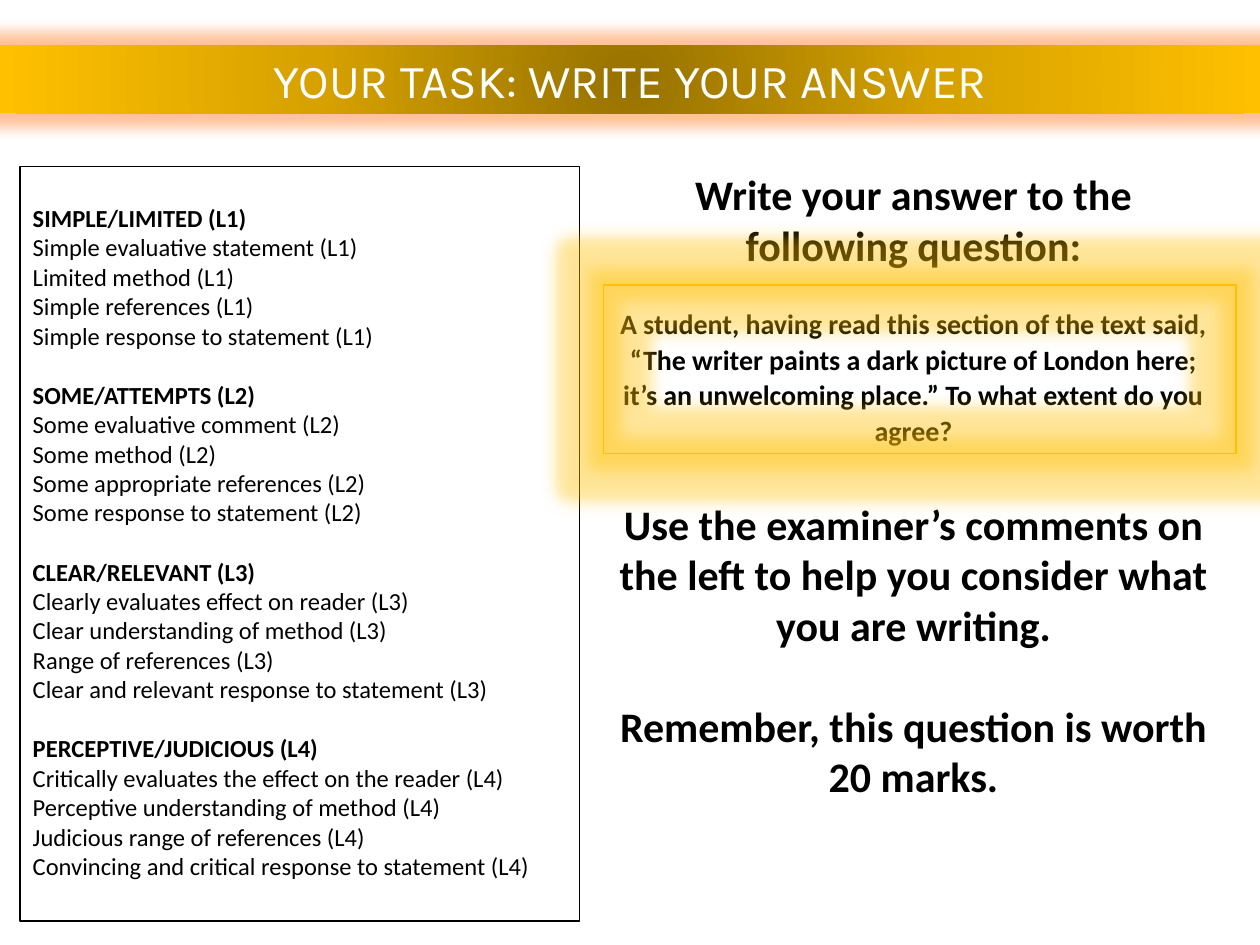
from dataclasses import dataclass

from lxml import etree
from pptx import Presentation
from pptx.dml.color import RGBColor
from pptx.enum.shapes import MSO_SHAPE as Preset
from pptx.enum.text import MSO_ANCHOR as Anchor, MSO_AUTO_SIZE as AutoSize, PP_ALIGN as Align
from pptx.oxml import parse_xml
from pptx.oxml.ns import nsdecls, qn
from pptx.util import Inches, Pt


@dataclass(frozen=True)
class Theme:
    text: str = "000000"
    title: str = "FFFFFF"
    gold: str = "FFC000"
    banner_stops: tuple = ((0, "977200"), (50, "D7A200"), (100, "FFC000"))
    banner_glow: str = "FF6600"
    body_font: str = "Calibri"
    title_font: str = "Karla"
    title_size: float = 27
    prompt_size: float = 24
    question_size: float = 16
    criteria_size: float = 14


THEME = Theme()

CRITERIA = {
    "SIMPLE/LIMITED (L1)": (
        "Simple evaluative statement (L1)",
        "Limited method (L1)",
        "Simple references (L1)",
        "Simple response to statement (L1)",
    ),
    "SOME/ATTEMPTS (L2)": (
        "Some evaluative comment (L2)",
        "Some method (L2)",
        "Some appropriate references (L2)",
        "Some response to statement (L2)",
    ),
    "CLEAR/RELEVANT (L3)": (
        "Clearly evaluates effect on reader (L3)",
        "Clear understanding of method (L3)",
        "Range of references (L3)",
        "Clear and relevant response to statement (L3)",
    ),
    "PERCEPTIVE/JUDICIOUS (L4)": (
        "Critically evaluates the effect on the reader (L4)",
        "Perceptive understanding of method (L4)",
        "Judicious range of references (L4)",
        "Convincing and critical response to statement (L4)",
    ),
}

# Text, size, space before, line spacing
PROMPTS = (
    ("Write your answer to the following question:", THEME.prompt_size, 0, 1),
    ("A student, having read this section of the text said, “The writer paints a dark "
     "picture of London here; it’s an unwelcoming place.” To what extent do you agree?",
     THEME.question_size, 19.5, 1.07),
    ("Use the examiner’s comments on the left to help you consider what you are writing.",
     THEME.prompt_size, 29, 1),
    ("Remember, this question is worth 20 marks.", THEME.prompt_size, 29, 1),
)


def place(shape, box):
    shape.left, shape.top, shape.width, shape.height = (Inches(value) for value in box)


def set_line(shape, color, width):
    shape.line.color.rgb = RGBColor.from_string(color)
    shape.line.width = Pt(width)


def add_glow(shape, color, radius):
    """Give the shape a soft, half-transparent halo."""
    properties = shape._element.spPr
    for old in properties.findall(qn("a:effectLst")):
        properties.remove(old)
    properties.append(parse_xml(
        f'<a:effectLst {nsdecls("a")}><a:glow rad="{Pt(radius)}"><a:srgbClr val="{color}">'
        '<a:alpha val="40000"/></a:srgbClr></a:glow></a:effectLst>'))


def fill_radial(shape, stops):
    """Fill the shape with a gradient that runs outwards from its centre."""
    stop_xml = "".join(f'<a:gs pos="{position * 1000}"><a:srgbClr val="{color}"/></a:gs>'
                       for position, color in stops)
    shape._element.spPr.append(parse_xml(
        f'<a:gradFill {nsdecls("a")} rotWithShape="1"><a:gsLst>{stop_xml}</a:gsLst>'
        '<a:path path="circle"><a:fillToRect l="50000" t="50000" r="50000" b="50000"/>'
        '</a:path></a:gradFill>'))


def prepare_frame(shape, anchor):
    frame = shape.text_frame
    frame.word_wrap = True
    frame.auto_size = AutoSize.NONE
    frame.vertical_anchor = anchor
    return frame


def add_paragraph(frame, text, size, bold=False, before=0, spacing=1, align=Align.LEFT,
                  font=THEME.body_font, color=THEME.text):
    """Write one unbulleted paragraph, using the first one while it is empty."""
    first = frame.paragraphs[0]
    paragraph = frame.add_paragraph() if first.runs else first
    properties = paragraph._p.get_or_add_pPr()
    properties.set("marL", "0")
    properties.set("indent", "0")
    etree.SubElement(properties, qn("a:buNone"))
    paragraph.alignment = align
    paragraph.space_before = Pt(before)
    paragraph.space_after = Pt(0)
    paragraph.line_spacing = spacing
    run = paragraph.add_run()
    run.text = text
    run.font.name = font
    run.font.size = Pt(size)
    run.font.bold = bold
    run.font.color.rgb = RGBColor.from_string(color)


def build_banner(title, box):
    place(title, box)
    fill_radial(title, THEME.banner_stops)
    add_glow(title, THEME.banner_glow, 16)
    add_paragraph(prepare_frame(title, Anchor.MIDDLE), "YOUR TASK: WRITE YOUR ANSWER",
                  THEME.title_size, align=Align.CENTER, font=THEME.title_font,
                  color=THEME.title)


def build_criteria(body, box):
    place(body, box)
    set_line(body, THEME.text, 0.75)
    frame = prepare_frame(body, Anchor.TOP)
    frame.margin_top = Inches(0.29)
    for index, (heading, points) in enumerate(CRITERIA.items()):
        add_paragraph(frame, heading, THEME.criteria_size, bold=True,
                      before=17 if index else 0)
        for point in points:
            add_paragraph(frame, point, THEME.criteria_size)


def build_prompts(body, box):
    place(body, box)
    frame = prepare_frame(body, Anchor.TOP)
    for text, size, before, spacing in PROMPTS:
        add_paragraph(frame, text, size, bold=True, before=before, spacing=spacing,
                      align=Align.CENTER)


def build_question_frame(slide, box):
    shape = slide.shapes.add_shape(Preset.RECTANGLE, *(Inches(value) for value in box))
    shape.shadow.inherit = False
    shape.fill.background()
    set_line(shape, THEME.gold, 1)
    add_glow(shape, THEME.gold, 18)


def main():
    presentation = Presentation()
    presentation.slide_width, presentation.slide_height = Inches(10), Inches(7.5)
    slide = presentation.slides.add_slide(presentation.slide_layouts[3])
    title, left_body, right_body = slide.placeholders

    # Right column first, so that the glowing frame lies over its text
    build_prompts(right_body, (4.74, 1.29, 5.02, 5.43))
    build_banner(title, (0, 0.36, 10, 0.54))
    build_question_frame(slide, (4.79, 2.26, 5.02, 1.34))
    build_criteria(left_body, (0.16, 1.32, 4.44, 5.99))

    presentation.save("out.pptx")


if __name__ == "__main__":
    main()
